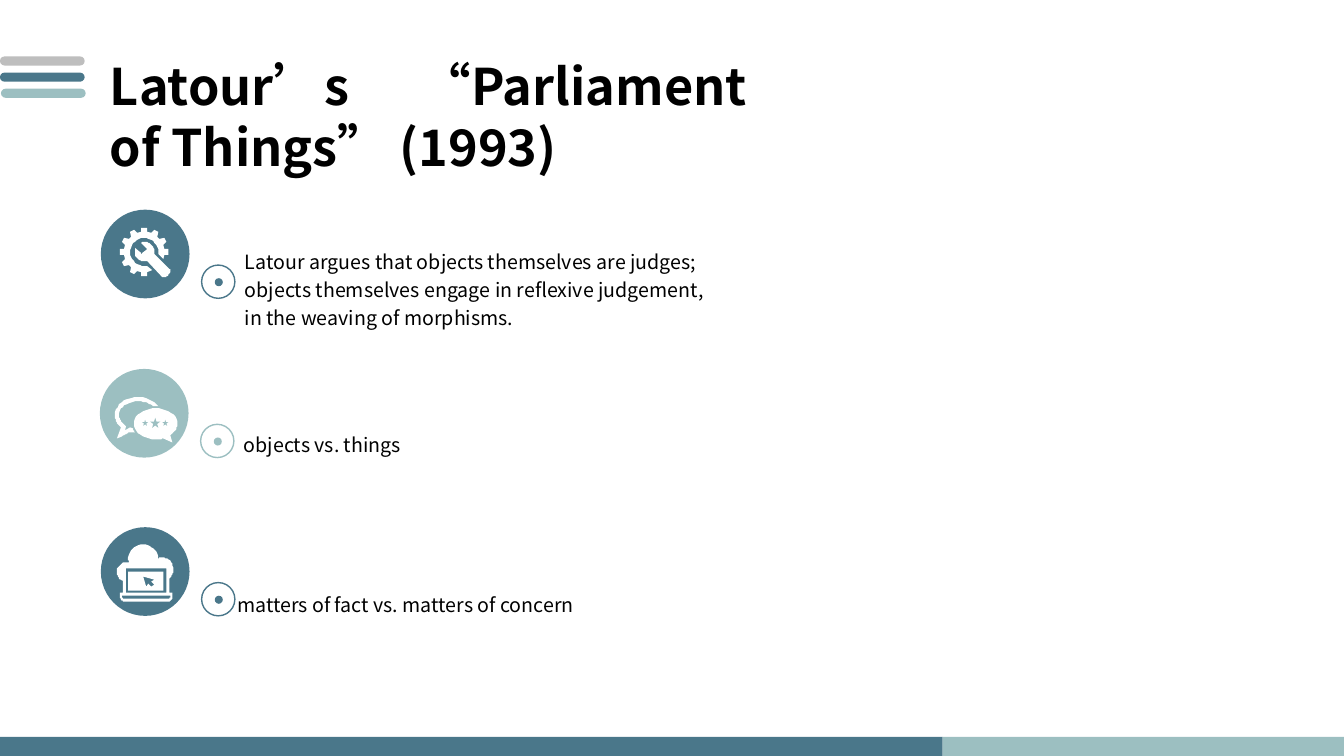
from math import cos, radians, sin

from lxml.etree import SubElement
from pptx import Presentation
from pptx.dml.color import RGBColor
from pptx.enum.shapes import MSO_SHAPE
from pptx.enum.text import MSO_ANCHOR, MSO_AUTO_SIZE, PP_ALIGN
from pptx.oxml.ns import qn
from pptx.util import Inches, Pt

BLUE, TEAL, GREY, WHITE, BLACK = "4A778A", "9CBFC1", "BEBEBE", "FFFFFF", "000000"
FONT = "Noto Sans CJK SC"
COLUMNS, ROWS = 1333, 750
CELL = Inches(0.01)


def color(hex_string):
    return RGBColor.from_string(hex_string)


def trace(segments):
    """Turn points (x, y) and cubic segments (x1, y1, x2, y2, x, y) into a list of points."""
    points = []
    for segment in segments:
        if len(segment) == 2:
            points.append(segment)
            continue
        controls = [points[-1], segment[:2], segment[2:4], segment[4:]]
        for step in range(1, 11):
            t = step / 10
            weights = ((1 - t) ** 3, 3 * t * (1 - t) ** 2, 3 * t * t * (1 - t), t ** 3)
            points.append(tuple(sum(w * c[axis] for w, c in zip(weights, controls))
                                for axis in (0, 1)))
    return points


def rectangle(left, top, right, bottom):
    return [(left, top), (right, top), (right, bottom), (left, bottom)]


class SlideBuilder:
    """Draws on one slide; all lengths are cells of a 1333 by 750 grid."""

    def __init__(self, presentation):
        presentation.slide_width = COLUMNS * CELL
        presentation.slide_height = ROWS * CELL
        self.slide = presentation.slides.add_slide(presentation.slide_layouts[5])

    def paint(self, shape, fill, line=None):
        shape.shadow.inherit = False
        if fill:
            shape.fill.solid()
            shape.fill.fore_color.rgb = color(fill)
        else:
            shape.fill.background()
        if line:
            shape.line.color.rgb = color(line)
            shape.line.width = Pt(1)
        else:
            shape.line.fill.background()
        return shape

    def preset(self, kind, left, top, width, height, fill, line=None):
        shape = self.slide.shapes.add_shape(
            kind, int(left * CELL), int(top * CELL), int(width * CELL), int(height * CELL))
        return self.paint(shape, fill, line)

    def circle(self, left, top, size, fill, line=None):
        return self.preset(MSO_SHAPE.OVAL, left, top, size, size, fill, line)

    def outline(self, *contours, fill=WHITE):
        """Draw closed contours as one shape; inner contours become holes."""
        paths = [trace(contour) for contour in contours]
        builder = self.slide.shapes.build_freeform(*paths[0][0], scale=CELL)
        builder.add_line_segments(paths[0][1:])
        for points in paths[1:]:
            builder.move_to(*points[0])
            builder.add_line_segments(points[1:])
        return self.paint(builder.convert_to_shape(), fill)

    def fill_text(self, shape, text, size, bold=False):
        frame = shape.text_frame
        frame.word_wrap = True
        frame.auto_size = MSO_AUTO_SIZE.SHAPE_TO_FIT_TEXT
        frame.vertical_anchor = MSO_ANCHOR.TOP
        paragraph = frame.paragraphs[0]
        run = paragraph.add_run()
        run.text = text
        run.font.name, run.font.size, run.font.bold = FONT, Pt(size), bold
        run.font.color.rgb = color(BLACK)
        SubElement(run.font._element, qn("a:ea"), typeface=FONT)
        return paragraph

    def title(self, left, top, width, height, text):
        shape = self.slide.shapes.title
        shape.left, shape.top = left * CELL, top * CELL
        shape.width, shape.height = width * CELL, height * CELL
        paragraph = self.fill_text(shape, text, 36, bold=True)
        paragraph.alignment = PP_ALIGN.JUSTIFY
        paragraph.line_spacing = 1.0
        paragraph.space_before = Pt(0)

    def body(self, left, top, width, height, text):
        shape = self.slide.shapes.add_textbox(
            left * CELL, top * CELL, width * CELL, height * CELL)
        self.fill_text(shape, text, 14).line_spacing = 1.2

    def gear_icon(self):
        def polar(radius, angle):
            return 143 + radius * cos(radians(angle)), 250 + radius * sin(radians(angle))

        tooth = ((20, -10), (24.5, -6), (24.5, 6), (20, 10))
        rim = [polar(radius, center + turn)
               for center in range(90, 361, 30) for radius, turn in tooth]
        hole = [polar(14, angle) for angle in range(368, 77, -10)]
        self.outline([polar(20, 67)] + rim + [polar(20, 380)] + hole)
        self.outline([
            (169, 269), (169, 269, 169, 267, 168, 267), (153, 252),
            (153, 249, 153, 245, 150, 243), (147, 240, 143, 239, 140, 241),
            (145, 246), (146, 247, 146, 247, 145, 248), (141, 251),
            (141, 252, 140, 252, 140, 251), (134, 246),
            (133, 250, 134, 254, 136, 256), (139, 259, 142, 260, 146, 259),
            (161, 275), (161, 275, 162, 275, 163, 275), (166, 275, 168, 272, 169, 269)])

    def chat_icon(self):
        self.outline([
            (132, 425), (129, 424), (124, 427), (125, 423), (124, 422),
            (120, 419, 118, 416, 118, 412), (118, 404, 126, 398, 137, 398),
            (143, 398, 148, 400, 152, 403), (157, 403),
            (153, 398, 146, 394, 137, 394), (124, 394, 114, 402, 114, 412),
            (114, 417, 116, 421, 120, 424), (116, 435), (121, 433),
            (124, 431, 128, 429, 129, 429), (134, 429), (133, 428, 132, 427, 132, 425)])
        self.outline([
            (176, 420), (176, 412, 166, 405, 154, 405), (143, 405, 133, 412, 133, 420),
            (133, 429, 143, 436, 154, 436), (157, 436, 160, 436, 162, 435),
            (171, 439), (169, 432), (173, 429, 176, 425, 176, 420)])
        for center, size in ((144, 6), (154, 10), (164, 6)):
            self.preset(MSO_SHAPE.STAR_5_POINT, center - size / 2, 420 - size / 2 - 0.5,
                        size, size, TEAL)

    def cloud_laptop_icon(self):
        cloud = [
            (168, 588), (168, 574), (171, 571, 172, 568, 172, 565),
            (172, 558, 167, 553, 161, 553), (159, 553, 158, 553, 157, 554),
            (156, 546, 150, 540, 142, 540), (134, 540, 127, 547, 127, 555),
            (127, 556, 128, 557, 128, 558), (125, 558), (120, 558, 116, 562, 116, 567),
            (116, 572, 118, 575, 122, 576), (122, 588), (119, 588), (119, 592),
            (119, 594, 121, 597, 124, 597), (167, 597), (169, 597, 171, 594, 171, 592),
            (171, 588)]
        base = [(121, 591), (169, 591), (169, 592), (169, 593, 168, 594, 167, 594),
                (124, 594), (122, 594, 121, 593, 121, 592)]
        cursor = [(153, 580), (150, 582), (147, 579), (145, 582), (142, 572),
                  (153, 575), (150, 577)]
        self.outline(cloud, rectangle(125, 564, 165, 588), base)
        self.outline(rectangle(127, 567, 162, 586), cursor)

    def item(self, left, top, accent, draw_icon):
        """Draw an icon disc with the ringed dot beside it."""
        self.circle(left, top, 88, accent)
        self.circle(left + 100, top + 55, 33, None, accent)
        self.circle(left + 113, top + 68, 8, accent)
        draw_icon()


def main():
    presentation = Presentation()
    builder = SlideBuilder(presentation)
    for row, (left, fill) in enumerate(((0, GREY), (0, BLUE), (1, TEAL))):
        bar = builder.preset(MSO_SHAPE.ROUNDED_RECTANGLE, left, 56 + 16 * row, 84, 9, fill)
        bar.adjustments[0] = 0.5
    builder.preset(MSO_SHAPE.RECTANGLE, 0, 731, 935, 19, BLUE)
    builder.preset(MSO_SHAPE.RECTANGLE, 935, 731, COLUMNS - 935, 19, TEAL)

    builder.item(100, 208, BLUE, builder.gear_icon)
    builder.item(99, 366, TEAL, builder.chat_icon)
    builder.item(100, 523, BLUE, builder.cloud_laptop_icon)
    builder.body(233, 238, 493, 95,
                 "Latour argues that objects themselves are judges; objects themselves "
                 "engage in reflexive judgement, in the weaving of morphisms.")
    builder.body(232, 420, 493, 66, "objects vs. things")
    builder.body(221, 579, 493, 66, " matters of fact vs. matters of concern")
    builder.title(99, 50, 652, 131, "Latour’s “Parliament of Things” (1993)")
    presentation.save("out.pptx")


if __name__ == "__main__":
    main()
